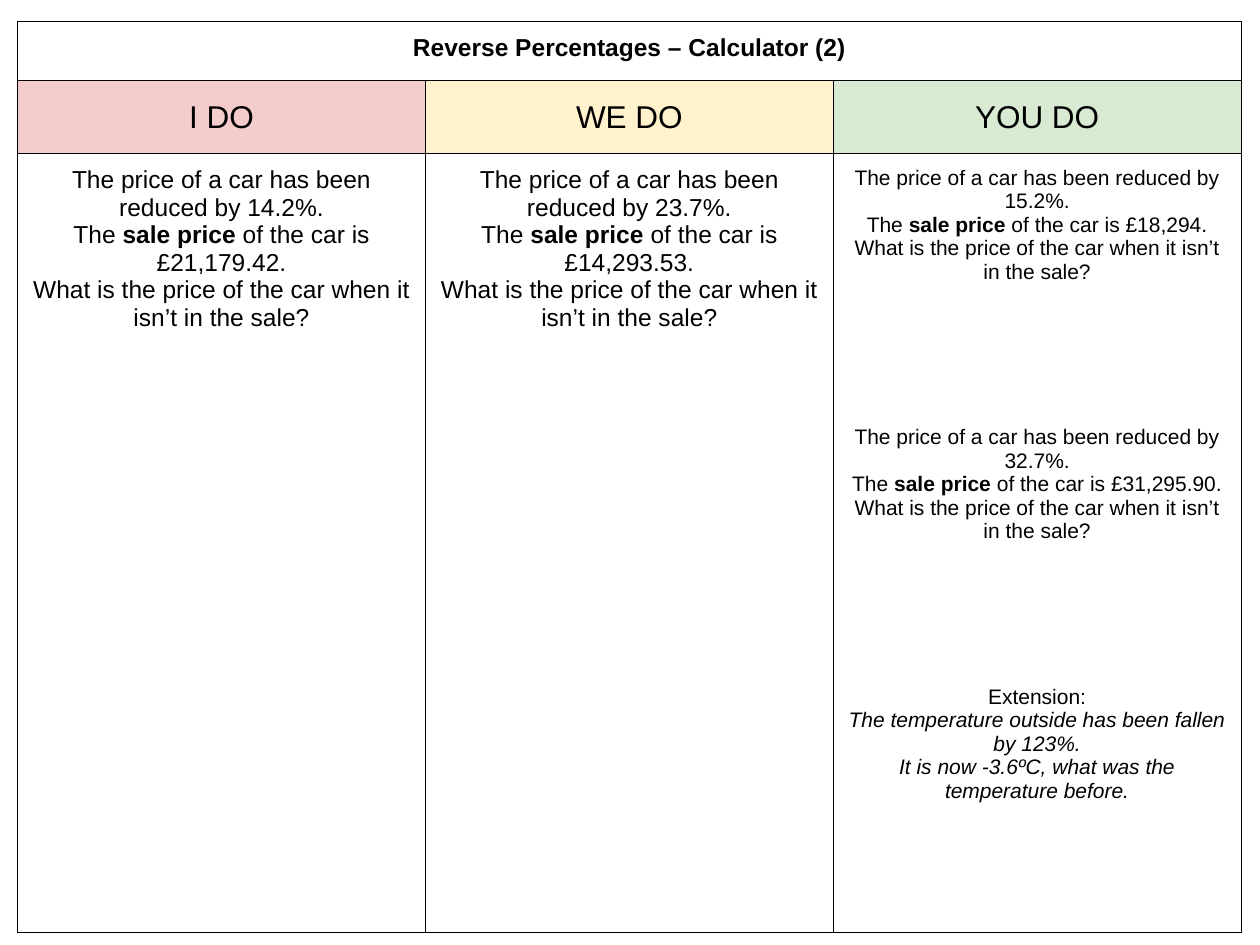
"""Build an I do / We do / You do worksheet slide on reverse percentages."""
from dataclasses import dataclass

from lxml.etree import SubElement
from pptx import Presentation
from pptx.dml.color import RGBColor as RGB
from pptx.enum.text import MSO_ANCHOR as Anchor, PP_ALIGN as Align
from pptx.oxml.ns import qn
from pptx.util import Inches, Pt


@dataclass(frozen=True)
class Theme:
    font: str = "Arial"
    ink: str = "000000"
    i_do: str = "F4CCCC"
    we_do: str = "FFF2CC"
    you_do: str = "D9EAD3"
    heading: int = 18
    body: int = 14
    practice: int = 12
    border: float = 0.75
    problem_gap: int = 81
    inset: float = 0.1


THEME = Theme()
TITLE = "Reverse Percentages – Calculator (2)"
KEY_PHRASE = "sale price"
STAGES = [
    ("I DO", THEME.i_do, THEME.body, [("14.2%", "£21,179.42")]),
    ("WE DO", THEME.we_do, THEME.body, [("23.7%", "£14,293.53")]),
    ("YOU DO", THEME.you_do, THEME.practice,
     [("15.2%", "£18,294"), ("32.7%", "£31,295.90")]),
]
EXTENSION = [
    "Extension:",
    "The temperature outside has been fallen by 123%.",
    "It is now -3.6ºC, what was the temperature before.",
]
SLIDE_SIZE = (10, 7.5)
TABLE_LEFT, TABLE_TOP, TABLE_WIDTH = 0.14, 0.17, 9.71
ROW_HEIGHTS = [0.47, 0.58, 6.18]


def car_problem(reduction, price):
    """Return the lines of one reverse percentage question."""
    return [
        f"The price of a car has been reduced by {reduction}.",
        f"The {KEY_PHRASE} of the car is {price}.",
        "What is the price of the car when it isn’t in the sale?",
    ]


def style_cell(cell, fill=None, anchor=Anchor.TOP):
    """Give a cell its borders, insets, anchor and fill."""
    properties = cell._tc.get_or_add_tcPr()
    for side in ("a:lnL", "a:lnR", "a:lnT", "a:lnB"):
        line = SubElement(properties, qn(side), w=str(Pt(THEME.border)))
        solid = SubElement(line, qn("a:solidFill"))
        SubElement(solid, qn("a:srgbClr"), val=THEME.ink)
    cell.margin_left = cell.margin_right = Inches(THEME.inset)
    cell.margin_top = cell.margin_bottom = Inches(THEME.inset)
    cell.vertical_anchor = anchor
    if fill:
        cell.fill.solid()
        cell.fill.fore_color.rgb = RGB.from_string(fill)
    else:
        cell.fill.background()


def write_line(paragraph, text, size, bold=False, italic=False):
    """Write one centred line, with the key phrase in bold."""
    paragraph.alignment = Align.CENTER
    for part in filter(None, text.partition(KEY_PHRASE)):
        run = paragraph.add_run()
        run.text = part
        run.font.name = THEME.font
        run.font.size = Pt(size)
        run.font.color.rgb = RGB.from_string(THEME.ink)
        run.font.bold = bold or part == KEY_PHRASE
        run.font.italic = italic


def write_problems(cell, problems, size):
    """Stack problems in a cell with working space between them."""
    frame = cell.text_frame
    for number, problem in enumerate(problems):
        for index, text in enumerate(problem):
            first = number == index == 0
            paragraph = frame.paragraphs[0] if first else frame.add_paragraph()
            if number and index == 0:
                paragraph.space_before = Pt(THEME.problem_gap)
            write_line(paragraph, text, size, italic=problem is EXTENSION and index > 0)


def main():
    """Build and save the slide."""
    deck = Presentation()
    deck.slide_width, deck.slide_height = map(Inches, SLIDE_SIZE)
    slide = deck.slides.add_slide(deck.slide_layouts[6])
    worksheet = slide.shapes.add_table(
        len(ROW_HEIGHTS), len(STAGES), Inches(TABLE_LEFT), Inches(TABLE_TOP),
        Inches(TABLE_WIDTH), Inches(sum(ROW_HEIGHTS))).table
    worksheet.first_row = worksheet.horz_banding = False
    for row, height in zip(worksheet.rows, ROW_HEIGHTS):
        row.height = Inches(height)

    banner = worksheet.cell(0, 0)
    banner.merge(worksheet.cell(0, len(STAGES) - 1))
    write_line(banner.text_frame.paragraphs[0], TITLE, THEME.body, bold=True)

    for column, (stage, colour, size, questions) in enumerate(STAGES):
        title_cell, heading, work = (worksheet.cell(row, column) for row in range(3))
        style_cell(title_cell)
        style_cell(heading, colour, Anchor.MIDDLE)
        style_cell(work)
        write_line(heading.text_frame.paragraphs[0], stage, THEME.heading)
        problems = [car_problem(*question) for question in questions]
        if column == len(STAGES) - 1:
            problems.append(EXTENSION)
        write_problems(work, problems, size)

    deck.save("out.pptx")


if __name__ == "__main__":
    main()
